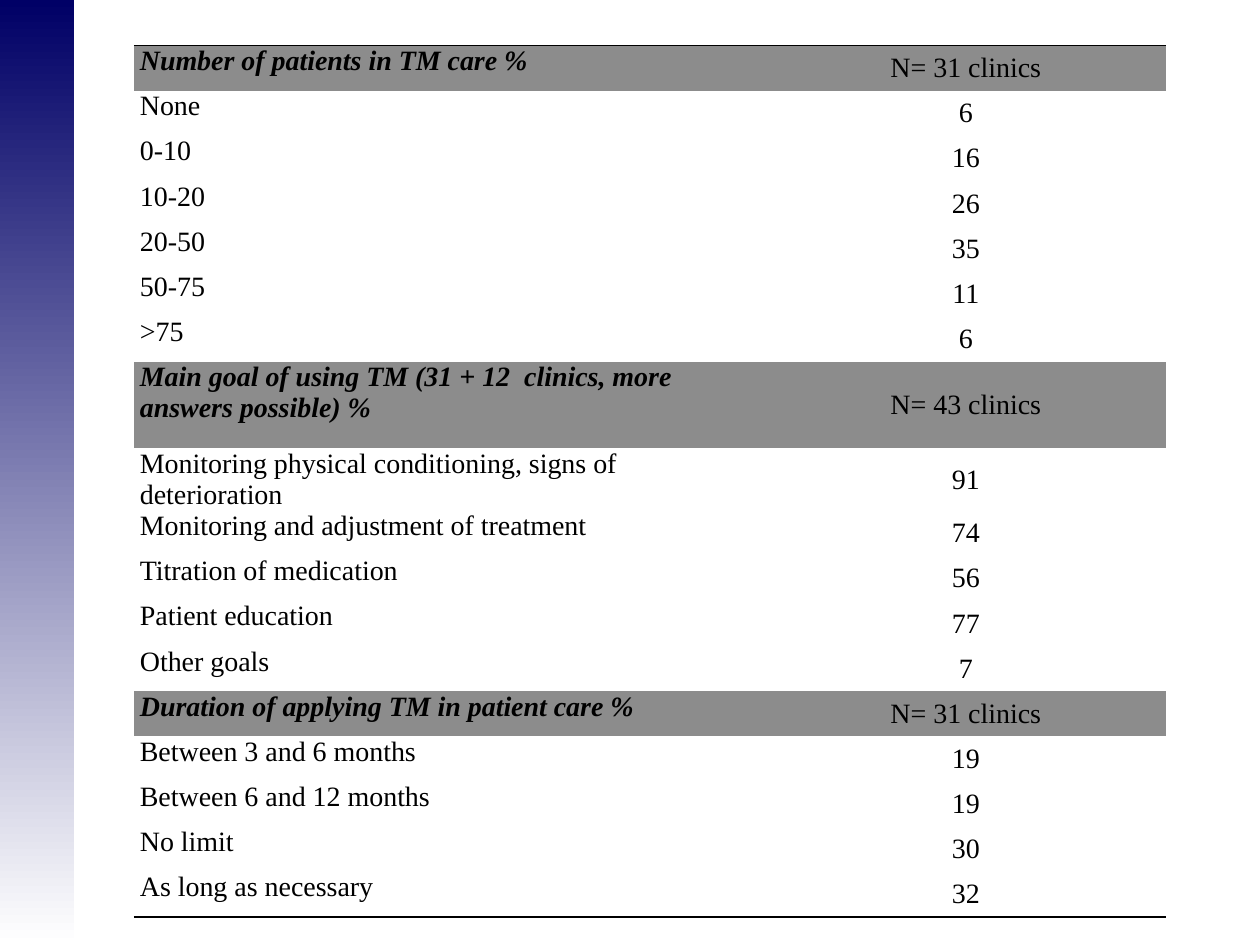
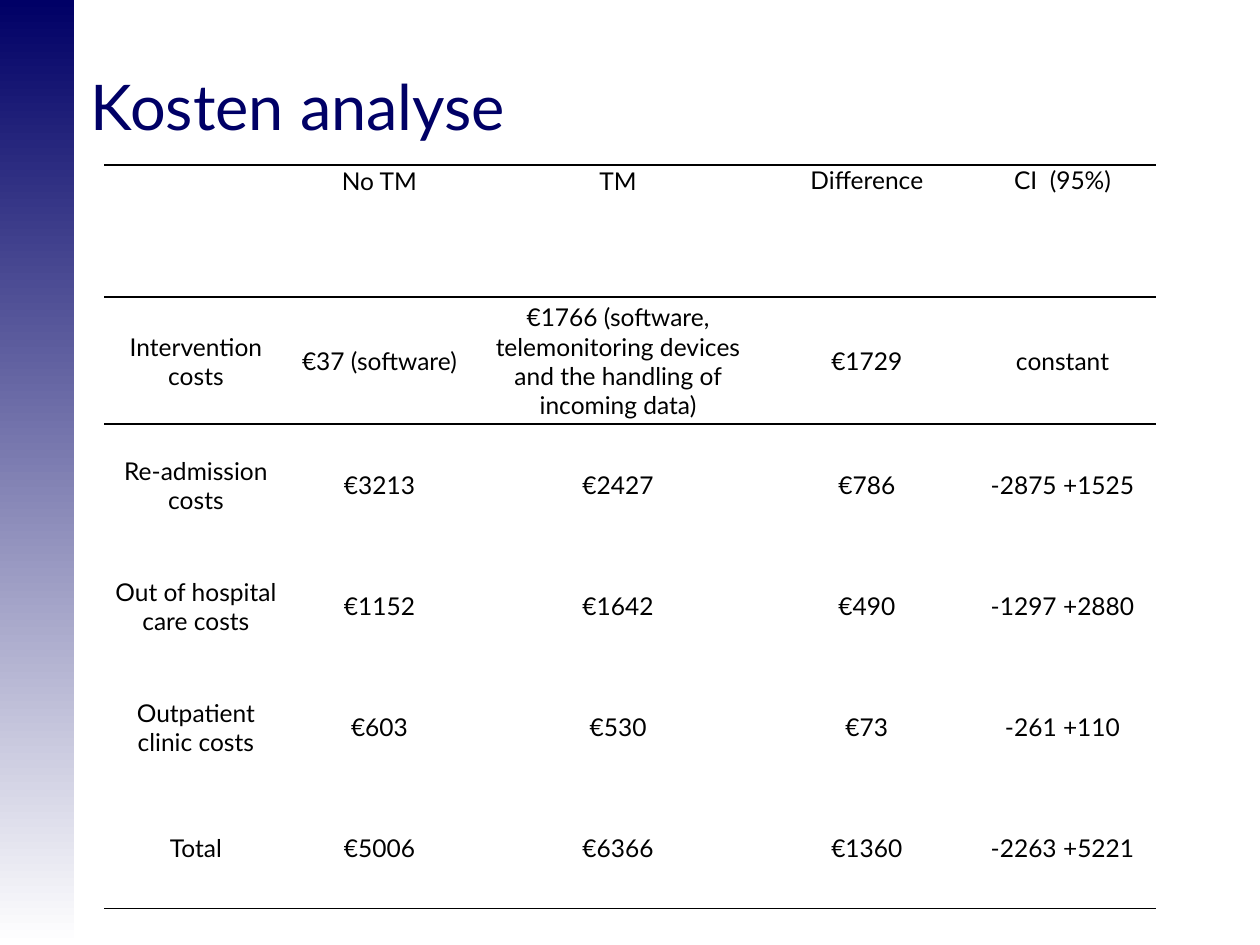
from dataclasses import dataclass

from lxml import etree
from pptx import Presentation
from pptx.dml.color import RGBColor
from pptx.enum.shapes import MSO_SHAPE
from pptx.enum.text import MSO_ANCHOR, PP_ALIGN
from pptx.oxml.ns import qn
from pptx.util import Cm, Pt

RECTANGLE = MSO_SHAPE.RECTANGLE
TOP, MIDDLE = MSO_ANCHOR.TOP, MSO_ANCHOR.MIDDLE
LEFT, CENTER = PP_ALIGN.LEFT, PP_ALIGN.CENTER
NO_STYLE_NO_GRID = "{2D5ABB26-0587-4C30-8999-92F81FD0307C}"

CLINIC_SECTIONS = [
    ("Number of patients in TM care %", "N= 31 clinics", [
        ("None", "6"),
        ("0-10", "16"),
        ("10-20", "26"),
        ("20-50", "35"),
        ("50-75", "11"),
        (">75", "6"),
    ]),
    ("Main goal of using TM (31 + 12  clinics, more answers possible) %", "N= 43 clinics", [
        ("Monitoring physical conditioning, signs of deterioration", "91"),
        ("Monitoring and adjustment of treatment", "74"),
        ("Titration of medication", "56"),
        ("Patient education", "77"),
        ("Other goals", "7"),
    ]),
    ("Duration of applying TM in patient care %", "N= 31 clinics", [
        ("Between 3 and 6 months", "19"),
        ("Between 6 and 12 months", "19"),
        ("No limit", "30"),
        ("As long as necessary", "32"),
    ]),
]

COST_TITLE = "Kosten analyse"
COST_ROWS = [
    ("", "No TM", "TM", "Difference", "CI  (95%)"),
    ("Intervention costs", "€37 (software)",
     "€1766 (software, telemonitoring devices and the handling of incoming data)",
     "€1729", "constant"),
    ("Re-admission costs", "€3213", "€2427", "€786", "-2875 +1525"),
    ("Out of hospital care costs", "€1152", "€1642", "€490", "-1297 +2880"),
    ("Outpatient clinic costs", "€603", "€530", "€73", "-261 +110"),
    ("Total", "€5006", "€6366", "€1360", "-2263 +5221"),
]


@dataclass(frozen=True)
class Theme:
    navy: RGBColor = RGBColor(0x00, 0x00, 0x66)
    white: RGBColor = RGBColor(0xFF, 0xFF, 0xFF)
    grey: RGBColor = RGBColor(0x8C, 0x8C, 0x8C)
    black: RGBColor = RGBColor(0x00, 0x00, 0x00)
    sans: str = "Lato"
    serif: str = "Times New Roman"
    title_size: Pt = Pt(36)
    clinic_size: Pt = Pt(16)
    cost_size: Pt = Pt(14)
    rule_width: Pt = Pt(1)


THEME = Theme()


def set_values(target, values):
    for name, value in values.items():
        setattr(target, name, value)


def set_font(paragraph, color, **values):
    set_values(paragraph.font, values)
    paragraph.font.color.rgb = color


def add_slide(presentation):
    """Add a blank slide with the gradient band down its left side."""
    slide = presentation.slides.add_slide(presentation.slide_layouts[6])
    band = slide.shapes.add_shape(RECTANGLE, 0, 0, Cm(1.5), presentation.slide_height)
    band.shadow.inherit = False
    band.line.fill.background()
    band.fill.gradient()
    band.fill.gradient_angle = 270
    for stop, color, position in zip(band.fill.gradient_stops, (THEME.navy, THEME.white), (0, 1)):
        stop.color.rgb = color
        stop.position = position
    return slide


def add_title(slide, text):
    box = slide.shapes.add_textbox(Cm(0.69), Cm(0.53), Cm(24), Cm(3.18))
    frame = box.text_frame
    set_values(frame, {"word_wrap": True, "vertical_anchor": MIDDLE, "margin_left": Cm(1.14)})
    frame.text = text
    set_font(frame.paragraphs[0], THEME.navy, name=THEME.sans, size=THEME.title_size)


def add_grid(slide, rows, left, top, widths, heights):
    """Add an unstyled table holding the rows' text."""
    shape = slide.shapes.add_table(len(rows), len(widths), left, top, sum(widths), sum(heights))
    shape.element.xpath(".//a:tableStyleId")[0].text = NO_STYLE_NO_GRID
    table = shape.table
    set_values(table, {"first_row": False, "horz_banding": False})
    for column, width in zip(table.columns, widths):
        column.width = width
    for row, height, texts in zip(table.rows, heights, rows):
        row.height = height
        for cell, text in zip(row.cells, texts):
            cell.text = text
    return table


def rule_row(row, *edges):
    """Draw rules on the given edges, lnT before lnB, of every cell in a row."""
    for cell in row.cells:
        properties = cell._tc.get_or_add_tcPr()
        for index, edge in enumerate(edges):
            line = etree.Element(qn(f"a:{edge}"), w=str(THEME.rule_width))
            fill = etree.SubElement(line, qn("a:solidFill"))
            etree.SubElement(fill, qn("a:srgbClr"), val=str(THEME.black))
            properties.insert(index, line)


def build_clinics(presentation):
    slide = add_slide(presentation)
    rows, heading_rows = [], set()
    for heading, clinics, answers in CLINIC_SECTIONS:
        heading_rows.add(len(rows))
        rows += [(heading, clinics), *answers]
    tall_rows = {CLINIC_SECTIONS[1][0]: Cm(1.75), CLINIC_SECTIONS[1][2][0][0]: Cm(1.25)}
    heights = [tall_rows.get(label, Cm(0.91)) for label, _ in rows]
    table = add_grid(slide, rows, Cm(2.7), Cm(0.92), (Cm(12.73), Cm(8.08)), heights)

    margins = {"margin_left": Cm(0.12), "margin_right": Cm(0.12),
               "margin_top": 0, "margin_bottom": 0}
    for row_index, row in enumerate(table.rows):
        is_heading = row_index in heading_rows
        for column_index, cell in enumerate(row.cells):
            is_label = column_index == 0
            set_values(cell, {**margins, "vertical_anchor": TOP if is_label else MIDDLE})
            cell.fill.solid()
            cell.fill.fore_color.rgb = THEME.grey if is_heading else THEME.white
            paragraph = cell.text_frame.paragraphs[0]
            paragraph.alignment = LEFT if is_label else CENTER
            emphasis = is_heading and is_label
            set_font(paragraph, THEME.black, name=THEME.serif, size=THEME.clinic_size,
                     bold=emphasis, italic=emphasis)
    rule_row(table.rows[0], "lnT")
    rule_row(table.rows[len(rows) - 1], "lnB")


def build_costs(presentation):
    slide = add_slide(presentation)
    add_title(slide, COST_TITLE)
    widths = (Cm(3.7), Cm(3.7), Cm(5.92), Cm(4.11), Cm(3.78))
    heights = [Cm(2.66), Cm(2.56)] + [Cm(2.44)] * (len(COST_ROWS) - 2)
    table = add_grid(slide, COST_ROWS, Cm(2.1), Cm(3.33), widths, heights)

    for row_index, row in enumerate(table.rows):
        for column_index, cell in enumerate(row.cells):
            side, above = (Cm(0.18), Cm(0.03)) if column_index < 3 else (0, 0)
            set_values(cell, {
                "margin_left": side, "margin_right": side,
                "margin_top": above, "margin_bottom": 0,
                "vertical_anchor": MIDDLE if row_index else TOP,
            })
            cell.fill.background()
            paragraph = cell.text_frame.paragraphs[0]
            paragraph.alignment = CENTER
            set_font(paragraph, THEME.black, name=THEME.sans, size=THEME.cost_size)
    rule_row(table.rows[0], "lnT", "lnB")
    rule_row(table.rows[1], "lnT")
    rule_row(table.rows[len(COST_ROWS) - 1], "lnB")


def main():
    presentation = Presentation()
    set_values(presentation, {"slide_width": Cm(25.4), "slide_height": Cm(19.05)})
    build_clinics(presentation)
    build_costs(presentation)
    presentation.save("out.pptx")


if __name__ == "__main__":
    main()
